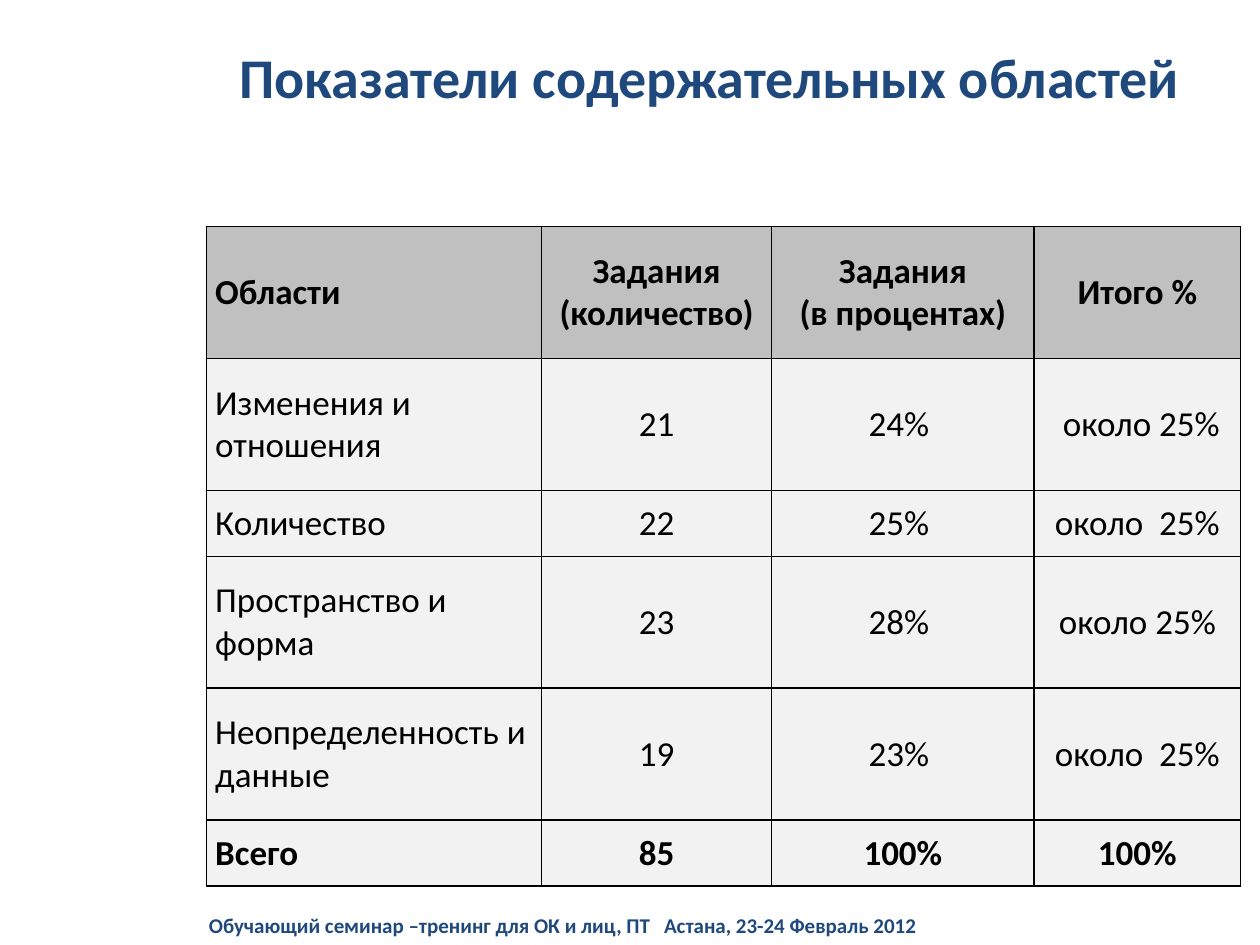
from lxml.etree import SubElement
from pptx import Presentation
from pptx.dml.color import RGBColor
from pptx.enum.text import MSO_ANCHOR, PP_ALIGN
from pptx.oxml.ns import qn
from pptx.util import Pt

FONT = "Calibri"
COLORS = {
    "heading": "1F497D",
    "text": "000000",
    "border": "000000",
    "header_fill": "C0C0C0",
    "body_fill": "F2F2F2",
}
COLUMN_WIDTHS = [191.5, 131.5, 150, 118]
LINE_HEIGHT = 37.7
ROW_LINES = [2, 2, 1, 2, 2, 1]
ROWS = [
    ["Области", "Задания\n(количество)", "Задания\n(в процентах)", "Итого %"],
    ["Изменения и отношения", "21", "24% ", " около 25%"],
    ["Количество", "22", "25% ", "около  25%"],
    ["Пространство и форма", "23", "28% ", "около 25%"],
    ["Неопределенность и данные", "19", "23% ", "около  25%"],
    ["Всего", "85", "100%", "100%"],
]


def color(name):
    return RGBColor.from_string(COLORS[name])


def add_span(para, text, size, color_name, bold):
    span = para.add_run()
    span.text = text
    span.font.name = FONT
    span.font.size = Pt(size)
    span.font.bold = bold
    span.font.color.rgb = color(color_name)


def add_heading(page, text, left, top, width, height, size):
    box = page.shapes.add_textbox(Pt(left), Pt(top), Pt(width), Pt(height))
    frame = box.text_frame
    frame.word_wrap = True
    frame.vertical_anchor = MSO_ANCHOR.MIDDLE
    add_span(frame.paragraphs[0], text, size, "heading", True)


def set_borders(cell):
    properties = cell._tc.get_or_add_tcPr()
    for position, side in enumerate(("a:lnL", "a:lnR", "a:lnT", "a:lnB")):
        line = SubElement(properties, qn(side), w=str(Pt(1)))
        fill = SubElement(line, qn("a:solidFill"))
        SubElement(fill, qn("a:srgbClr"), val=COLORS["border"])
        properties.insert(position, line)


def fill_cell(cell, text, fill_name, align, bold):
    cell.fill.solid()
    cell.fill.fore_color.rgb = color(fill_name)
    set_borders(cell)
    cell.vertical_anchor = MSO_ANCHOR.MIDDLE
    cell.margin_left = cell.margin_right = Pt(5)
    cell.margin_top = cell.margin_bottom = Pt(0)
    frame = cell.text_frame
    for index, line in enumerate(text.split("\n")):
        para = frame.add_paragraph() if index else frame.paragraphs[0]
        para.alignment = align
        add_span(para, line, 20, "text", bold)


def add_results_table(page, left, top):
    heights = [lines * LINE_HEIGHT for lines in ROW_LINES]
    table = page.shapes.add_table(
        len(ROWS), len(COLUMN_WIDTHS), Pt(left), Pt(top),
        Pt(sum(COLUMN_WIDTHS)), Pt(sum(heights)),
    ).table
    for column, width in zip(table.columns, COLUMN_WIDTHS):
        column.width = Pt(width)
    for row_index, (values, height) in enumerate(zip(ROWS, heights)):
        table.rows[row_index].height = Pt(height)
        bold = row_index in (0, len(ROWS) - 1)
        fill_name = "body_fill" if row_index else "header_fill"
        for column_index, value in enumerate(values):
            align = PP_ALIGN.CENTER if column_index else PP_ALIGN.LEFT
            fill_cell(table.cell(row_index, column_index), value, fill_name, align, bold)


def main():
    deck = Presentation()
    deck.slide_width, deck.slide_height = Pt(720), Pt(540)
    page = deck.slides.add_slide(deck.slide_layouts[6])
    add_heading(page, "Показатели содержательных областей", 129.6, 11.5, 574, 64, 32)
    add_results_table(page, 118, 129.5)
    add_heading(
        page,
        "Обучающий семинар –тренинг для ОК и лиц, ПТ   Астана, 23-24 Февраль 2012",
        112.3, 517, 478, 23, 12,
    )
    deck.save("out.pptx")


if __name__ == "__main__":
    main()
